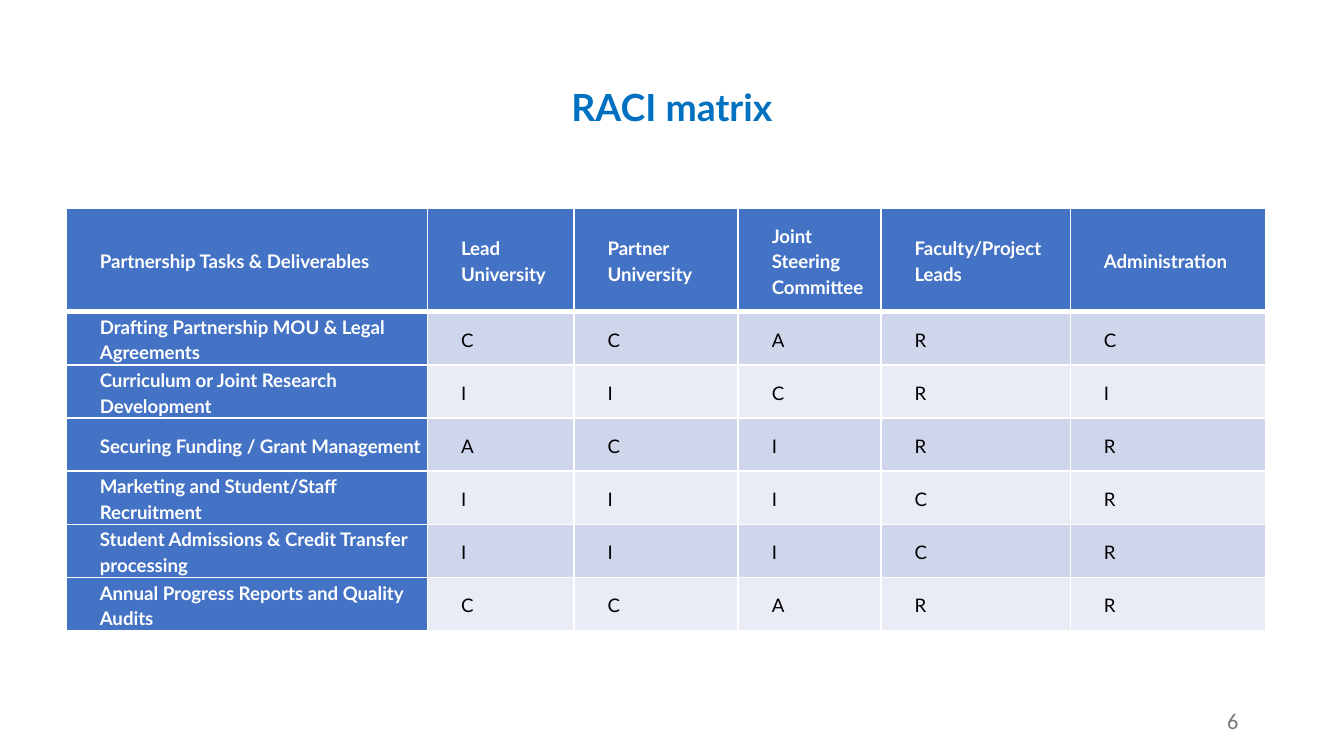
from lxml import etree
from pptx import Presentation
from pptx.dml.color import RGBColor
from pptx.enum.text import MSO_ANCHOR, PP_ALIGN
from pptx.oxml.ns import qn
from pptx.util import Pt

MIDDLE = MSO_ANCHOR.MIDDLE
CENTER = PP_ALIGN.CENTER
LEFT = PP_ALIGN.LEFT
RIGHT = PP_ALIGN.RIGHT

HEADINGS = ["Partnership Tasks & Deliverables", "Lead University", "Partner University",
            "Joint Steering Committee", "Faculty/Project Leads", "Administration"]
TASKS = [
    ("Drafting Partnership MOU & Legal Agreements", "CCARC"),
    ("Curriculum or Joint Research Development", "IICRI"),
    ("Securing Funding / Grant Management", "ACIRR"),
    ("Marketing and Student/Staff Recruitment", "IIICR"),
    ("Student Admissions & Credit Transfer processing", "IIICR"),
    ("Annual Progress Reports and Quality Audits", "CCARR"),
]
COLUMN_WIDTHS = [193.5, 78.5, 88, 76.5, 101.5, 104.5]
HEADER_HEIGHT = 55.5
TASK_HEIGHT = 28.5


def color(value):
    return RGBColor.from_string(value)


class SlideBuilder:
    heading_font = "Lato"
    number_font = "Calibri"
    title_color = "0070C0"
    number_color = "797979"
    header_fill = "4472C4"
    band_fills = ("CFD5EA", "E9EBF5")
    white = "FFFFFF"
    black = "000000"

    def __init__(self, slide):
        self.slide = slide

    def add_text(self, frame, text, size, font, text_color, bold=False, align=LEFT):
        frame.word_wrap = True
        paragraph = frame.paragraphs[0]
        paragraph.alignment = align
        run = paragraph.add_run()
        run.text = text
        run.font.size = Pt(size)
        run.font.name = font
        run.font.bold = bold
        run.font.color.rgb = color(text_color)
        return paragraph

    def title(self, text, left, top, width, height):
        shape = self.slide.shapes.title
        shape.left, shape.top = Pt(left), Pt(top)
        shape.width, shape.height = Pt(width), Pt(height)
        shape.text_frame.vertical_anchor = MIDDLE
        self.add_text(shape.text_frame, text, 20, self.heading_font, self.title_color, True, CENTER)

    def page_number(self, text, left, top, width, height):
        shape = self.slide.shapes.add_textbox(Pt(left), Pt(top), Pt(width), Pt(height))
        shape.text_frame.vertical_anchor = MIDDLE
        self.add_text(shape.text_frame, text, 12, self.number_font, self.number_color, align=RIGHT)

    def borders(self, cell, top, bottom):
        properties = cell._tc.get_or_add_tcPr()
        sides = (("a:lnL", 1), ("a:lnR", 1), ("a:lnT", top), ("a:lnB", bottom))
        for index, (tag, width) in enumerate(sides):
            line = etree.Element(qn(tag), w=str(Pt(width)))
            fill = etree.SubElement(line, qn("a:solidFill"))
            etree.SubElement(fill, qn("a:srgbClr"), val=self.white)
            properties.insert(index, line)

    def cell(self, cell, text, row, column):
        heading = row == 0 or column == 0
        cell.fill.solid()
        cell.fill.fore_color.rgb = color(
            self.header_fill if heading else self.band_fills[(row - 1) % 2])
        cell.margin_left = cell.margin_right = cell.margin_top = cell.margin_bottom = 0
        cell.vertical_anchor = MIDDLE
        paragraph = self.add_text(cell.text_frame, text, 10, self.heading_font,
                                  self.white if heading else self.black, heading)
        paragraph.line_spacing = 1.15
        paragraph._p.get_or_add_pPr().set("marL", str(Pt(18)))
        self.borders(cell, 3 if row == 1 else 1, 3 if row == 0 else 1)

    def table(self, rows, left, top, widths, heights):
        table = self.slide.shapes.add_table(
            len(rows), len(widths), Pt(left), Pt(top), Pt(sum(widths)), Pt(sum(heights))).table
        for column, width in zip(table.columns, widths):
            column.width = Pt(width)
        for row, height in zip(table.rows, heights):
            row.height = Pt(height)
        for row, texts in enumerate(rows):
            for column, text in enumerate(texts):
                self.cell(table.cell(row, column), text, row, column)


def main():
    presentation = Presentation()
    presentation.slide_width = Pt(720)
    presentation.slide_height = Pt(405)
    slide = presentation.slides.add_slide(presentation.slide_layouts[5])
    builder = SlideBuilder(slide)
    builder.title("RACI matrix", 49.5, 32.5, 621, 49)
    builder.page_number("6", 508.5, 375, 162, 21.5)
    rows = [HEADINGS] + [[task, *roles] for task, roles in TASKS]
    heights = [HEADER_HEIGHT] + [TASK_HEIGHT] * len(TASKS)
    builder.table(rows, 35.5, 111.5, COLUMN_WIDTHS, heights)
    presentation.save("out.pptx")


if __name__ == "__main__":
    main()
